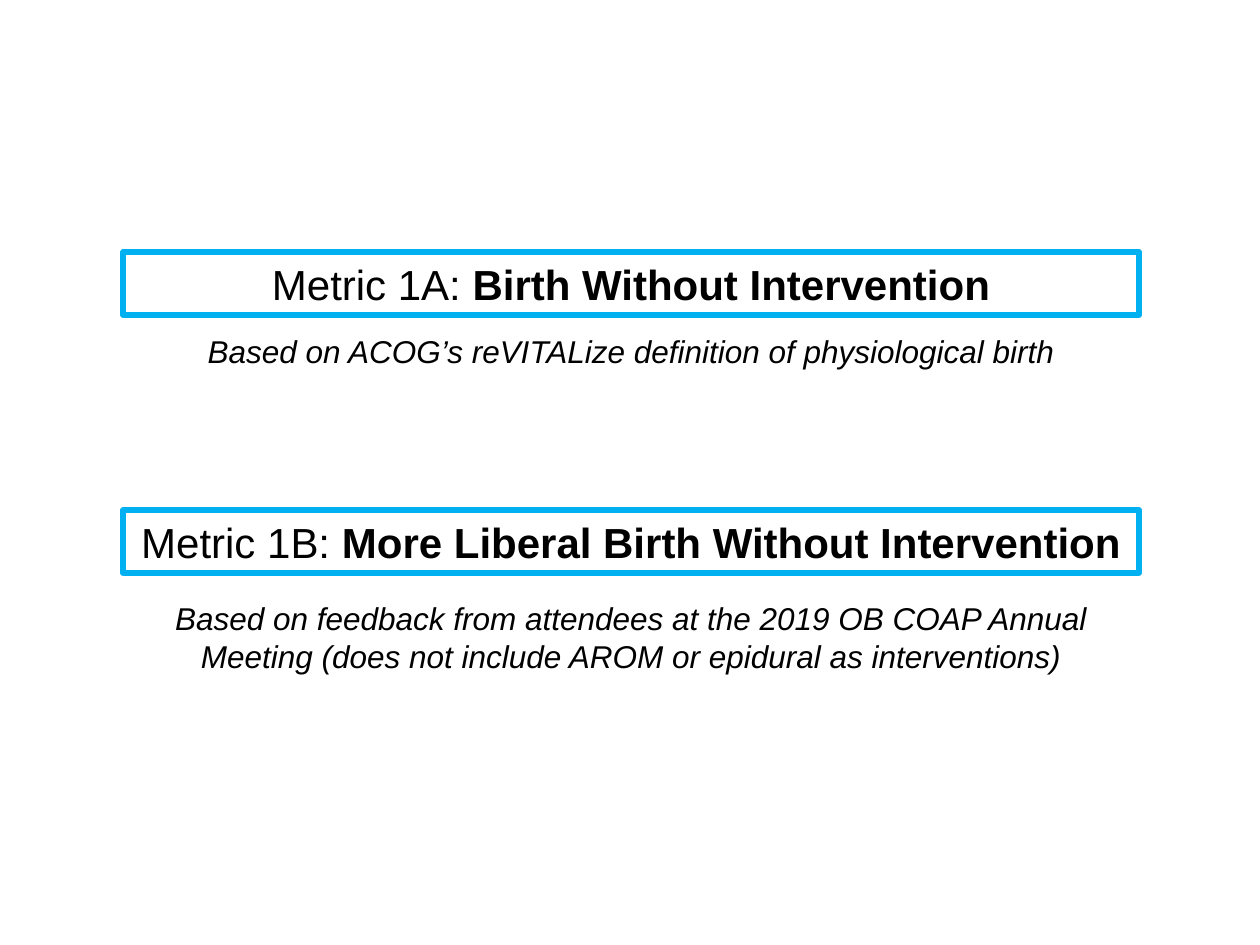
from dataclasses import dataclass

from pptx import Presentation
from pptx.dml.color import RGBColor
from pptx.enum.shapes import MSO_SHAPE
from pptx.enum.text import MSO_ANCHOR, PP_ALIGN
from pptx.util import Emu, Pt

METRICS = [
    dict(label="Metric 1A: ", name="Birth Without Intervention",
         basis="Based on ACOG’s reVITALize definition of physiological birth",
         top=252, basis_top=326, basis_height=50),
    dict(label="Metric 1B: ", name="More Liberal Birth Without Intervention",
         basis="Based on feedback from attendees at the 2019 OB COAP Annual "
               "Meeting (does not include AROM or epidural as interventions)",
         top=510, basis_top=593, basis_height=89),
]

SLIDE_W, SLIDE_H = 1260, 945
LEFT, WIDTH, TITLE_HEIGHT = 123, 1016, 63


@dataclass(frozen=True)
class Theme:
    font: str = "Arial"
    text: RGBColor = RGBColor(0, 0, 0)
    border: RGBColor = RGBColor(0x00, 0xB0, 0xF0)
    title_size: int = 24
    basis_size: int = 18
    border_width: int = 3


THEME = Theme()


def px(n):
    """Turn px at 126 to the inch into EMU."""
    return Emu(round(n * 914400 / 126))


def write(sp, runs, size, italic=False):
    """Fill a shape with one centred paragraph of (text, bold) runs."""
    tf = sp.text_frame
    tf.word_wrap = True
    tf.vertical_anchor = MSO_ANCHOR.TOP
    p = tf.paragraphs[0]
    p.alignment = PP_ALIGN.CENTER
    for text, bold in runs:
        r = p.add_run()
        r.text = text
        r.font.name, r.font.size = THEME.font, Pt(size)
        r.font.bold, r.font.italic = bold, italic
        r.font.color.rgb = THEME.text


def add_metric(s, metric):
    sp = s.shapes.add_shape(MSO_SHAPE.RECTANGLE, px(LEFT), px(metric["top"]),
                            px(WIDTH), px(TITLE_HEIGHT))
    sp.shadow.inherit = False
    sp.fill.background()
    sp.line.color.rgb = THEME.border
    sp.line.width = Pt(THEME.border_width)
    write(sp, [(metric["label"], False), (metric["name"], True)],
          THEME.title_size)

    box = s.shapes.add_textbox(px(LEFT), px(metric["basis_top"]),
                               px(WIDTH), px(metric["basis_height"]))
    write(box, [(metric["basis"], False)], THEME.basis_size, italic=True)


def main():
    prs = Presentation()
    prs.slide_width, prs.slide_height = px(SLIDE_W), px(SLIDE_H)
    s = prs.slides.add_slide(prs.slide_layouts[6])
    for metric in METRICS:
        add_metric(s, metric)
    prs.save("out.pptx")


if __name__ == "__main__":
    main()
